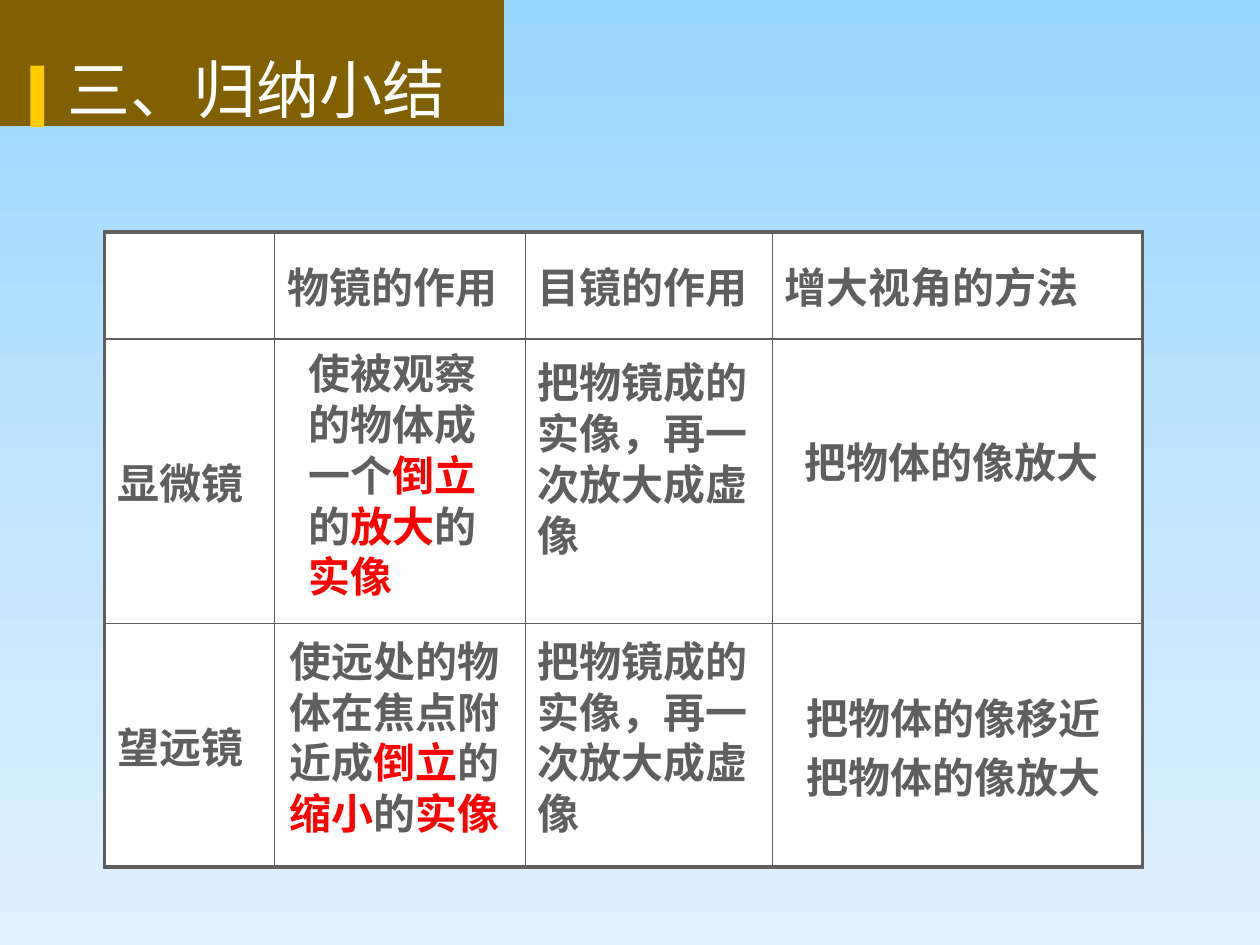
import copy
import math

from pptx import Presentation, util as u
from pptx.dml.color import RGBColor
from pptx.enum import shapes, text
from pptx.oxml import parse_xml
from pptx.oxml.ns import nsdecls, qn

GREY, RED, WHITE = "5F5F5F", "FF0000", "FFFFFF"
CJK, LATIN = "Noto Sans CJK SC", "Calibri"
COLUMNS = [1.35, 1.99, 1.96, 2.94]
ROWS = [0.85, 2.26, 1.93]
LABELS = [
    ["", "物镜的作用", "目镜的作用", "增大视角的方法"],
    ["显微镜", "", "", ""],
    ["望远镜", "", "", ""],
]
EYEPIECE = ["把物镜成的实像，再一次放大成虚像"]
ANSWERS = [
    ((2.35, 2.71, 1.83, 2.1), ["使被观察的物体成一个*倒立*的*放大*的*实像*"]),
    ((4.17, 2.78, 1.92, 1.7), EYEPIECE),
    ((6.29, 3.41, 2.6, 0.5), ["把物体的像放大"]),
    ((2.2, 4.99, 2.08, 1.7), ["使远处的物体在焦点附近成*倒立*的*缩小*的*实像*"]),
    ((4.17, 4.99, 1.89, 1.7), EYEPIECE),
    ((6.3, 5.44, 2.6, 0.98), ["把物体的像移近", "把物体的像放大"]),
]


def rgb(value):
    """Turn a hex string into a colour."""
    return RGBColor.from_string(value)


def paint(shape, colour):
    """Give a shape a plain fill without line or shadow."""
    shape.fill.solid()
    shape.fill.fore_color.rgb = rgb(colour)
    shape.line.fill.background()
    shape.shadow.inherit = False


def write(paragraph, wording, colour, font=CJK, size=24, bold=True):
    """Write wording in runs, with the parts between asterisks in red."""
    for index, part in enumerate(wording.split("*")):
        if not part:
            continue
        run = paragraph.add_run()
        run.text = part
        values = {"name": font, "size": u.Pt(size), "bold": bold}
        for name, value in values.items():
            setattr(run.font, name, value)
        run.font.color.rgb = rgb(RED if index % 2 else colour)
        run.font._element.append(
            parse_xml(f'<a:ea {nsdecls("a")} typeface="{CJK}"/>'))


def add_text(slide, box, lines, leading, colour=GREY, **style):
    """Place a wrapped text box with one paragraph for each line."""
    frame = slide.shapes.add_textbox(*map(u.Inches, box)).text_frame
    frame.word_wrap = True
    for index, line in enumerate(lines):
        paragraph = frame.add_paragraph() if index else frame.paragraphs[0]
        paragraph.line_spacing = u.Pt(leading)
        paragraph.space_before = u.Pt(4.8 if index else 0)
        write(paragraph, line, colour, **style)
    return frame


def set_background(slide):
    """Fill the background with a three-step vertical gradient."""
    fill = slide.background.fill
    fill.gradient()
    fill.gradient_angle = 270
    stop_list = slide.element.find(".//" + qn("a:gsLst"))
    stop_list.append(copy.deepcopy(stop_list[-1]))
    steps = [(0, "97D6FF"), (0.5, "BFE4FF"), (1, "DFF1FF")]
    for stop, (position, colour) in zip(fill.gradient_stops, steps):
        stop.position = position
        stop.color.rgb = rgb(colour)


def add_heading(slide, box):
    """Place the tab with its rounded corner, accent bar and title."""
    left, top, width, height = box
    right, bottom = left + width, top + height
    radius_x, radius_y = 0.44, 0.27
    corner = []
    for degrees in range(0, 91, 5):
        angle = math.radians(degrees)
        corner.append((right - radius_x * (1 - math.sin(angle)),
                       top + radius_y * (1 - math.cos(angle))))
    builder = slide.shapes.build_freeform(left, top, scale=u.Inches(1))
    builder.add_line_segments(corner + [(right, bottom), (left, bottom)])
    paint(builder.convert_to_shape(), "806000")

    bar_box = (left + 0.27, bottom - 0.49, 0.11, 0.49)
    bar = slide.shapes.add_shape(
        shapes.MSO_SHAPE.RECTANGLE, *map(u.Inches, bar_box))
    paint(bar, "FFCC00")
    add_text(slide, (left + 0.47, top + 0.24, 3.73, 0.72), ["三、归纳小结"],
             39, WHITE, size=36, bold=False)


def set_borders(cell, widths):
    """Draw the cell borders, given widths by side in points."""
    properties = cell._tc.get_or_add_tcPr()
    for index, (side, width) in enumerate(widths.items()):
        properties.insert(index, parse_xml(
            f'<a:ln{side} {nsdecls("a")} w="{u.Pt(width)}"><a:solidFill>'
            f'<a:srgbClr val="{GREY}"/></a:solidFill></a:ln{side}>'))


def add_comparison(slide, box):
    """Place the table that compares the two instruments."""
    table = slide.shapes.add_table(
        len(ROWS), len(COLUMNS), *map(u.Inches, box)).table
    for column, width in zip(table.columns, COLUMNS):
        column.width = u.Inches(width)
    for row, height in zip(table.rows, ROWS):
        row.height = u.Inches(height)
    for r, labels in enumerate(LABELS):
        for c, label in enumerate(labels):
            cell = table.cell(r, c)
            cell.fill.solid()
            cell.fill.fore_color.rgb = rgb(WHITE)
            cell.vertical_anchor = text.MSO_ANCHOR.MIDDLE
            write(cell.text_frame.paragraphs[0], label, GREY, LATIN)
            outer = {"L": c == 0, "R": c == len(COLUMNS) - 1,
                     "T": r == 0, "B": r == len(ROWS) - 1}
            set_borders(cell, {side: 2.25 if edge else 1
                               for side, edge in outer.items()})


def add_answers(slide):
    """Place the answers over the body of the table."""
    for box, lines in ANSWERS:
        frame = add_text(slide, box, lines, 29)
        frame.auto_size = text.MSO_AUTO_SIZE.SHAPE_TO_FIT_TEXT


def main():
    """Build the summary slide and save it."""
    deck = Presentation()
    deck.slide_width, deck.slide_height = u.Inches(10), u.Inches(7.5)
    slide = deck.slides.add_slide(deck.slide_layouts[6])
    set_background(slide)
    add_heading(slide, (-0.03, 0.17, 4.08, 0.84))
    add_comparison(slide, (0.83, 1.84, sum(COLUMNS), sum(ROWS)))
    add_answers(slide)
    deck.save("out.pptx")


if __name__ == "__main__":
    main()
